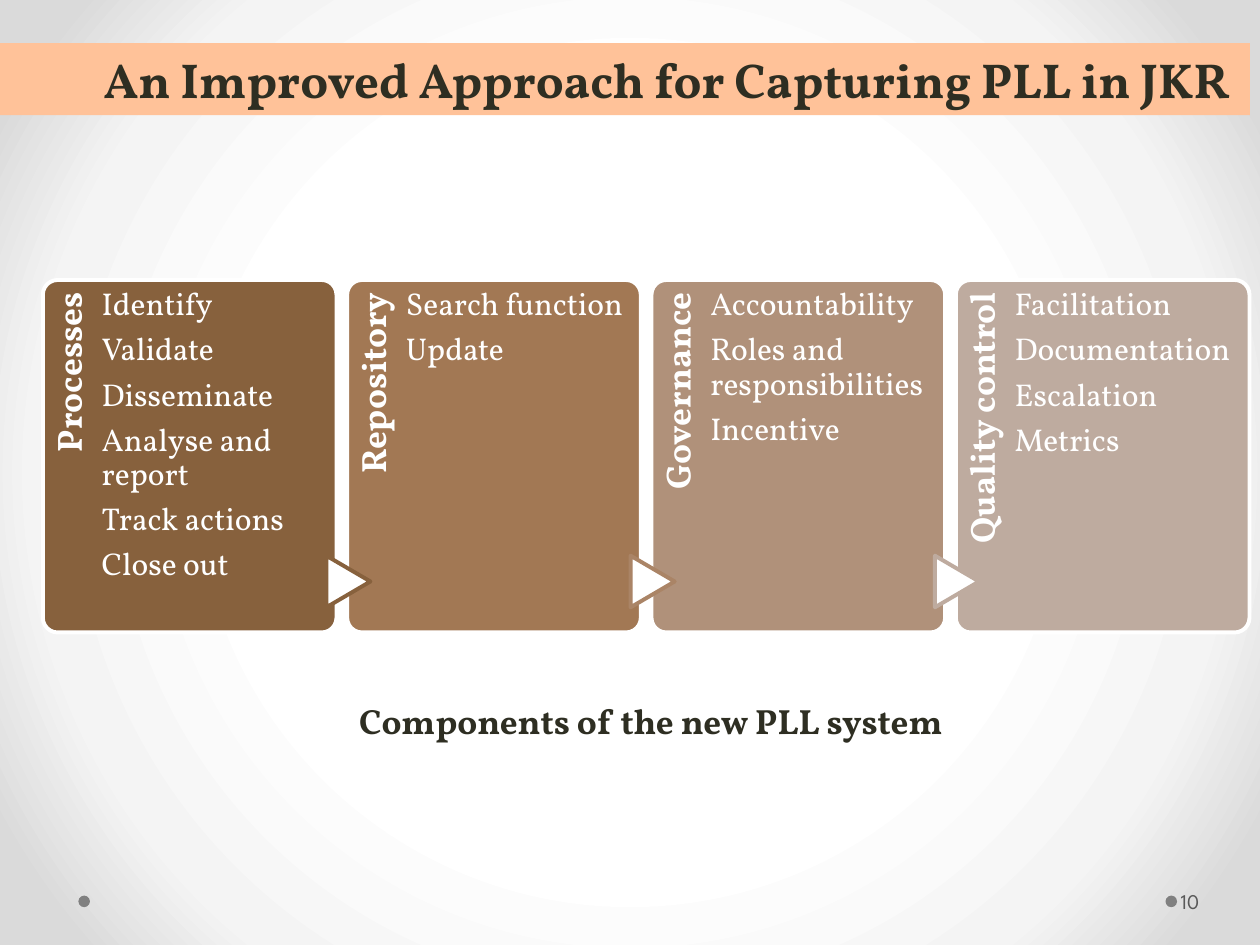
"""Build the slide on the components of the PLL system."""
from dataclasses import dataclass

from pptx import Presentation
from pptx.dml.color import RGBColor
from pptx.enum import shapes, text
from pptx.oxml import parse_xml
from pptx.oxml.ns import nsdecls, qn
from pptx.util import Pt

COLORS = {
    "white": "FFFFFF", "ink": "2E2E22", "banner": "FFC299", "dot": "808080", "number": "595959",
    "brown": "87613D", "tan": "A27854", "tan_edge": "AA8466", "sand": "B0917A", "stone": "BEAB9F",
}
BACKGROUND_STOPS = ((50, "FFFFFF"), (76, "F4F4F4"), (92, "DADADA"))
SERIF = "Vollkorn"
SANS = "League Spartan"
CARD_LEFT, CARD_TOP, CARD_WIDTH, CARD_HEIGHT, CARD_PITCH = 24.5, 160, 167.8, 201.4, 173.9
STRIP_WIDTH, LABEL_LENGTH, ITEMS_WIDTH = 33.6, 165.4, 125.2
ARROW_TOP, ARROW_WIDTH, ARROW_HEIGHT, ARROW_OVERLAP = 319.7, 29.5, 25.2, 14.1


@dataclass
class Box:
    left: float
    top: float
    width: float
    height: float

    def lengths(self) -> tuple:
        return Pt(self.left), Pt(self.top), Pt(self.width), Pt(self.height)


@dataclass
class Style:
    size: float
    color: str
    font: str = SERIF
    bold: bool = False
    align: text.PP_ALIGN = text.PP_ALIGN.LEFT
    line_spacing: float = 1.0
    space_after: float = 0


@dataclass
class Card:
    label: str
    color: str
    items: tuple[str, ...]
    arrow_color: str | None = None


CARDS = (
    Card("Processes", "brown", ("Identify", "Validate", "Disseminate", "Analyse and report",
                                "Track actions", "Close out")),
    Card("Repository", "tan", ("Search function", "Update"), "brown"),
    Card("Governance", "sand", ("Accountability", "Roles and responsibilities", "Incentive"),
         "tan_edge"),
    Card("Quality control", "stone", ("Facilitation", "Documentation", "Escalation", "Metrics"),
         "stone"),
)
TITLE = Style(28, "ink", bold=True, align=text.PP_ALIGN.RIGHT)
CAPTION = Style(20, "ink", bold=True, align=text.PP_ALIGN.CENTER)
LABEL = Style(20, "white", bold=True, align=text.PP_ALIGN.RIGHT, line_spacing=0.9)
ITEM = Style(18, "white", line_spacing=0.9, space_after=6.3)
NUMBER = Style(12, "number", font=SANS)


def rgb(name: str) -> RGBColor:
    """Return the named colour."""
    return RGBColor.from_string(COLORS[name])


def paint_background(slide) -> None:
    """Fill the background with a circular gradient."""
    slide.background.fill.gradient()
    old = next(slide.element.iter(qn("a:gradFill")))
    stops = "".join(f'<a:gs pos="{position * 1000}"><a:srgbClr val="{color}"/></a:gs>'
                    for position, color in BACKGROUND_STOPS)
    gradient = parse_xml(
        f'<a:gradFill {nsdecls("a")} rotWithShape="1"><a:gsLst>{stops}</a:gsLst><a:path path="circle">'
        '<a:fillToRect l="50000" t="50000" r="50000" b="50000"/></a:path></a:gradFill>')
    old.getparent().replace(old, gradient)


def add_shape(slide, kind, box: Box, fill: str, line: str | None = None):
    """Add a flat preset shape."""
    shape = slide.shapes.add_shape(kind, *box.lengths())
    shape.shadow.inherit = False
    shape.fill.solid()
    shape.fill.fore_color.rgb = rgb(fill)
    if line:
        shape.line.color.rgb = rgb(line)
        shape.line.width = Pt(2.25)
    else:
        shape.line.fill.background()
    return shape


def write(shape, lines: tuple[str, ...], style: Style,
          insets: tuple[float, ...] = (7.2, 3.6, 7.2, 3.6),
          anchor: text.MSO_ANCHOR = text.MSO_ANCHOR.TOP) -> None:
    """Write one paragraph per line into a shape."""
    frame = shape.text_frame
    frame.word_wrap = True
    frame.vertical_anchor = anchor
    frame.margin_left, frame.margin_top, frame.margin_right, frame.margin_bottom = map(Pt, insets)
    for index, line in enumerate(lines):
        paragraph = frame.add_paragraph() if index else frame.paragraphs[0]
        paragraph.alignment = style.align
        paragraph.line_spacing = style.line_spacing
        paragraph.space_after = Pt(style.space_after)
        run = paragraph.add_run()
        run.text = line
        run.font.name = style.font
        run.font.size = Pt(style.size)
        run.font.bold = style.bold
        run.font.color.rgb = rgb(style.color)


def add_card(slide, card: Card, left: float) -> None:
    """Add a card with its turned label, incoming arrow and items."""
    body = add_shape(slide, shapes.MSO_SHAPE.ROUNDED_RECTANGLE,
                     Box(left, CARD_TOP, CARD_WIDTH, CARD_HEIGHT), card.color, "white")
    body.adjustments[0] = 0.05
    turn = (LABEL_LENGTH - STRIP_WIDTH) / 2
    label = slide.shapes.add_textbox(
        *Box(left - turn, CARD_TOP + turn, LABEL_LENGTH, STRIP_WIDTH).lengths())
    label.rotation = 270
    write(label, (card.label,), LABEL, (0, 5, 7.2, 0))
    if card.arrow_color:
        arrow = add_shape(slide, shapes.MSO_SHAPE.FLOWCHART_EXTRACT,
                          Box(left - ARROW_OVERLAP, ARROW_TOP, ARROW_WIDTH, ARROW_HEIGHT),
                          "white", card.arrow_color)
        arrow.rotation = 90
    items = slide.shapes.add_textbox(
        *Box(left + STRIP_WIDTH, CARD_TOP, ITEMS_WIDTH, CARD_HEIGHT).lengths())
    write(items, card.items, ITEM, (0, 5, 0, 0))


def main() -> None:
    """Build and save the presentation."""
    presentation = Presentation()
    presentation.slide_width, presentation.slide_height = Pt(720), Pt(540)
    slide = presentation.slides.add_slide(presentation.slide_layouts[6])
    paint_background(slide)
    for left in (666, 44.8):
        add_shape(slide, shapes.MSO_SHAPE.OVAL, Box(left, 511.8, 6.6, 6.6), "dot")
    banner = add_shape(slide, shapes.MSO_SHAPE.RECTANGLE, Box(0, 24.6, 714.2, 41.2), "banner")
    write(banner, ("An Improved Approach for Capturing PLL in JKR ",), TITLE)
    banner.text_frame.auto_size = text.MSO_AUTO_SIZE.SHAPE_TO_FIT_TEXT
    for index, card in enumerate(CARDS):
        add_card(slide, card, CARD_LEFT + index * CARD_PITCH)
    number = slide.shapes.add_textbox(*Box(672.5, 500.5, 44, 28.8).lengths())
    write(number, ("10",), NUMBER, (2.2, 3.6, 3.6, 3.6), text.MSO_ANCHOR.MIDDLE)
    caption = slide.shapes.add_textbox(*Box(185.8, 396, 372.2, 31.5).lengths())
    write(caption, ("Components of the new PLL system",), CAPTION)
    caption.text_frame.auto_size = text.MSO_AUTO_SIZE.SHAPE_TO_FIT_TEXT
    presentation.save("out.pptx")


if __name__ == "__main__":
    main()
